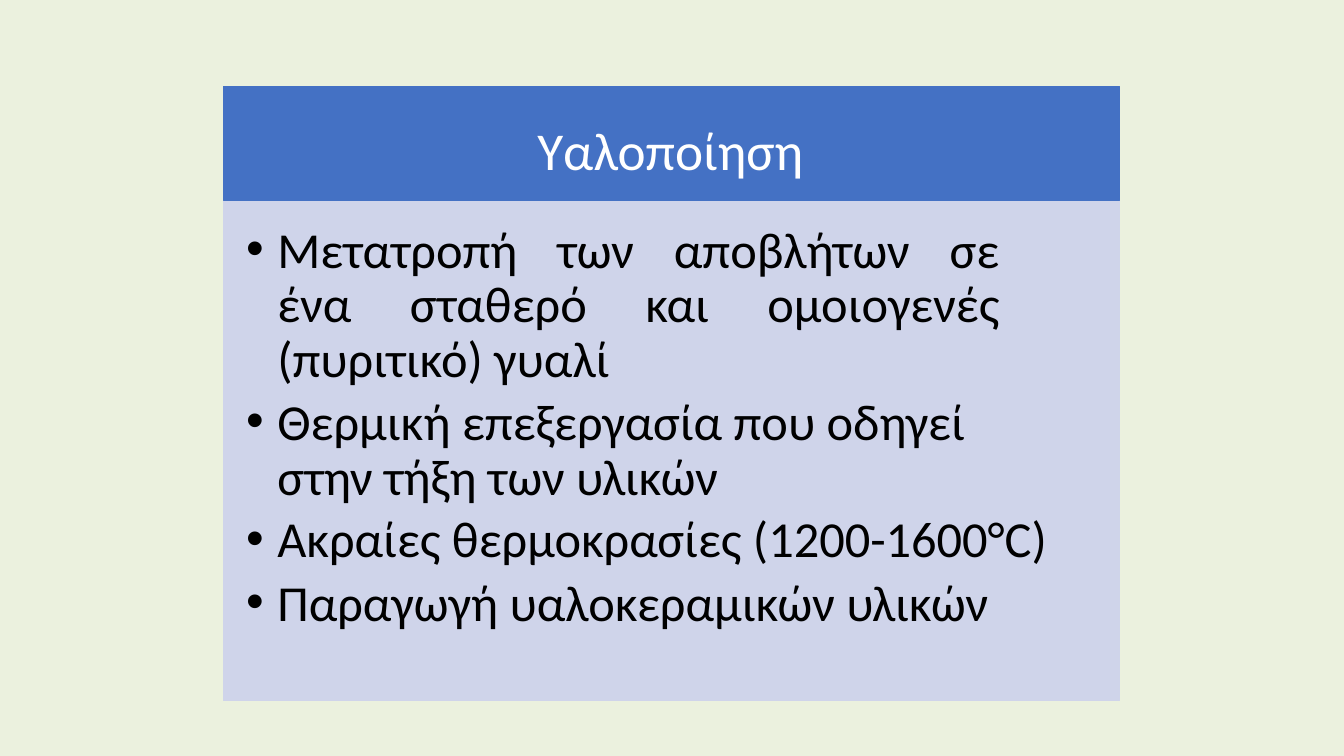
from lxml import etree
from pptx import Presentation
from pptx.dml.color import RGBColor
from pptx.enum.shapes import MSO_SHAPE
from pptx.enum.text import MSO_ANCHOR, MSO_AUTO_SIZE, PP_ALIGN
from pptx.oxml.ns import qn
from pptx.util import Cm, Pt

RECTANGLE = MSO_SHAPE.RECTANGLE
TOP = MSO_ANCHOR.TOP
NO_AUTOFIT = MSO_AUTO_SIZE.NONE
LEFT, JUSTIFY = PP_ALIGN.LEFT, PP_ALIGN.JUSTIFY

FONT = "Calibri"
TITLE = "Υαλοποίηση"
# text, alignment, line spacing, space before (pt), right margin (cm)
BULLETS = [
    ("Μετατροπή των αποβλήτων σε ένα σταθερό και ομοιογενές (πυριτικό) γυαλί",
     JUSTIFY, Pt(38.9), 0, 1.85),
    ("Θερμική επεξεργασία που οδηγεί στην τήξη των υλικών",
     LEFT, Pt(38.9), 6.5, 1.0),
    ("Ακραίες θερμοκρασίες (1200-1600°C)", LEFT, 1.0, 1.6, 0),
    ("Παραγωγή υαλοκεραμικών υλικών", LEFT, 1.0, 2.1, 0),
]
PANEL_LEFT, PANEL_WIDTH = 5.64, 22.58
HEADER_TOP, HEADER_HEIGHT, BODY_HEIGHT = 2.18, 2.87, 12.6
# top, height, colour
PANELS = [
    (HEADER_TOP + HEADER_HEIGHT, BODY_HEIGHT, "CFD4EA"),
    (HEADER_TOP, HEADER_HEIGHT, "4471C4"),
]


def color(hex_code):
    return RGBColor.from_string(hex_code)


def add_panel(slide, top, height, hex_code):
    panel = slide.shapes.add_shape(
        RECTANGLE, Cm(PANEL_LEFT), Cm(top), Cm(PANEL_WIDTH), Cm(height))
    panel.shadow.inherit = False
    panel.fill.solid()
    panel.fill.fore_color.rgb = color(hex_code)
    panel.line.color.rgb = color(hex_code)
    panel.line.width = Pt(1)
    return panel


def place(shape, left, top, width, height):
    """Move a placeholder and clear its margins and automatic fitting."""
    shape.left, shape.top = Cm(left), Cm(top)
    shape.width, shape.height = Cm(width), Cm(height)
    frame = shape.text_frame
    frame.margin_left = frame.margin_right = 0
    frame.margin_top = frame.margin_bottom = 0
    frame.auto_size = NO_AUTOFIT
    frame.vertical_anchor = TOP
    return frame


def style_text(paragraph, size, hex_code):
    for run in paragraph.runs:
        run.font.name = FONT
        run.font.size = Pt(size)
        run.font.color.rgb = color(hex_code)


def add_bullet(paragraph, right_margin):
    properties = paragraph._p.get_or_add_pPr()
    properties.set("marL", str(Cm(0.84)))
    properties.set("indent", str(Cm(-0.79)))
    properties.set("marR", str(Cm(right_margin)))
    etree.SubElement(properties, qn("a:buFont")).set("typeface", "Arial")
    etree.SubElement(properties, qn("a:buChar")).set("char", "•")


def main():
    presentation = Presentation()
    presentation.slide_width, presentation.slide_height = Cm(33.87), Cm(19.05)
    slide = presentation.slides.add_slide(presentation.slide_layouts[1])
    slide.background.fill.solid()
    slide.background.fill.fore_color.rgb = color("EBF1DE")
    title, body = slide.placeholders

    for panel_values in PANELS:
        panel = add_panel(slide, *panel_values)
        title._element.addprevious(panel._element)

    title_frame = place(title, 13.54, 2.95, 6.78, 1.42)
    title_frame.word_wrap = False
    title_frame.text = TITLE
    title_frame.paragraphs[0].alignment = LEFT
    style_text(title_frame.paragraphs[0], 38, "FFFFFF")

    body_frame = place(body, 6.15, 5.64, 20.9, 10.26)
    body_frame.word_wrap = True
    body_frame.text = "\n".join(bullet[0] for bullet in BULLETS)
    for paragraph, bullet in zip(body_frame.paragraphs, BULLETS):
        _, alignment, line_spacing, space_before, right_margin = bullet
        add_bullet(paragraph, right_margin)
        paragraph.alignment = alignment
        paragraph.line_spacing = line_spacing
        paragraph.space_before = Pt(space_before)
        style_text(paragraph, 36, "000000")

    presentation.save("out.pptx")


if __name__ == "__main__":
    main()
